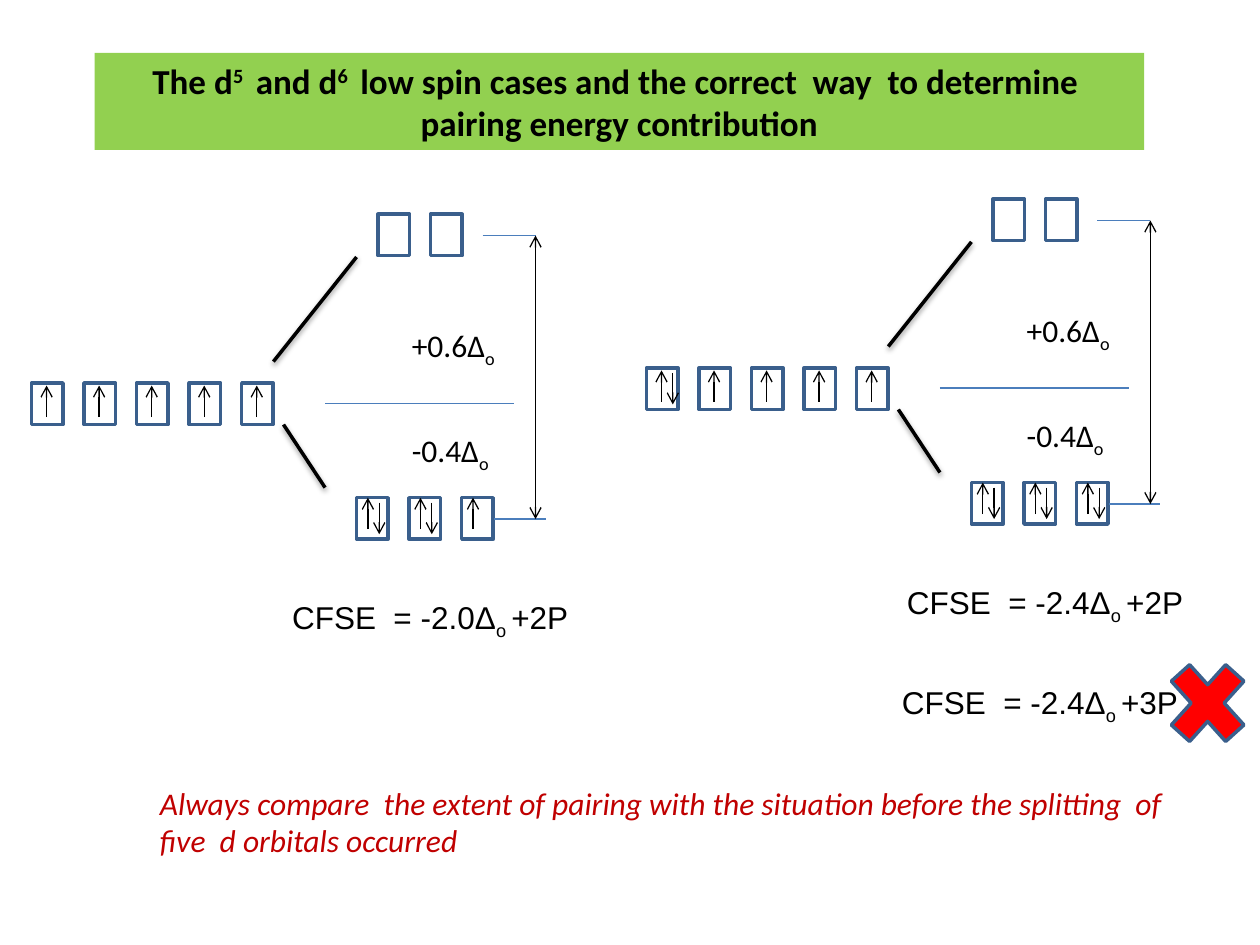
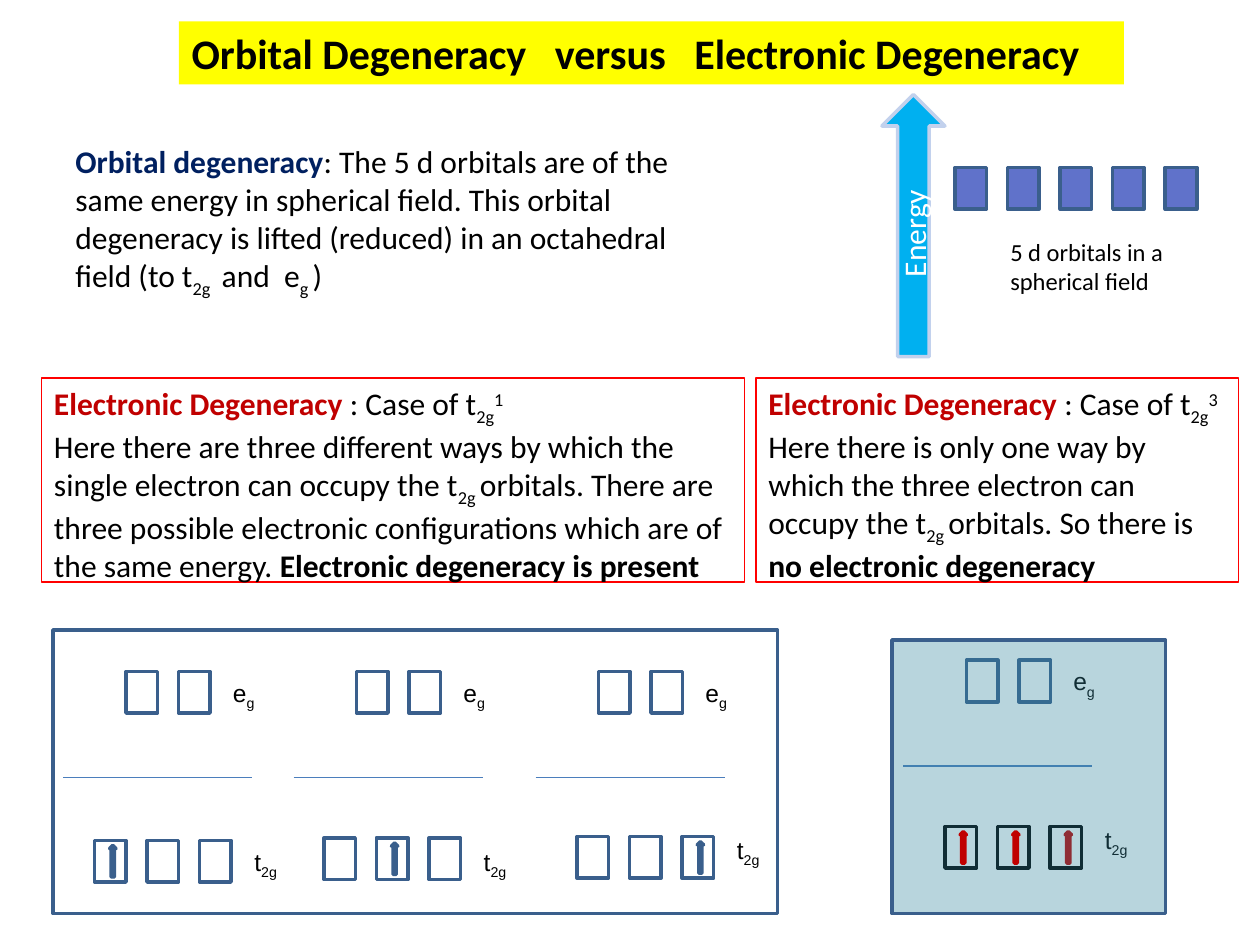
"""Build two slides on crystal field splitting and electronic degeneracy."""
import dataclasses

import lxml.etree
import pptx
import pptx.dml.color
import pptx.enum.shapes
import pptx.enum.text
import pptx.oxml.ns
import pptx.util

SHAPE = pptx.enum.shapes.MSO_SHAPE
ALIGN = pptx.enum.text.PP_ALIGN
ANCHOR = pptx.enum.text.MSO_ANCHOR
qn = pptx.oxml.ns.qn
Inches = pptx.util.Inches
Pt = pptx.util.Pt

PITCH, BOX_W, BOX_H = 0.417, 0.25, 0.33


@dataclasses.dataclass(frozen=True)
class Theme:
    ink: str = "000000"
    white: str = "FFFFFF"
    outline: str = "3A5F8C"
    level: str = "4B7EBC"
    spin: str = "4F81BD"
    orbital: str = "6072CA"
    crimson: str = "C00000"
    red: str = "FF0000"
    navy: str = "002060"
    green: str = "92D050"
    yellow: str = "FFFF00"
    sky: str = "00B0F0"
    sky_edge: str = "C2D1ED"
    teal: str = "31859C"
    body_font: str = "Calibri"
    label_font: str = "Arial"
    title: int = 24
    long_title: int = 20
    body: int = 18
    label: int = 14
    thin: float = 0.75
    thick: float = 2


T = Theme()


def rgb(color):
    return pptx.dml.color.RGBColor.from_string(color)


def inches(*lengths):
    return [Inches(length) for length in lengths]


def write(p, parts, size=T.body, font=T.body_font, color=T.ink, **marks):
    for part in parts:
        text, *tags = [part] if isinstance(part, str) else part
        p.add_run().text = text
    for f in [p.font, *(r.font for r in p.runs)]:
        f.name, f.size = font, Pt(size)
        f.color.rgb = rgb(color)
        f.bold, f.italic = marks.get("bold", False), marks.get("italic", False)
    for r, part in zip(p.runs, parts):
        for tag in [] if isinstance(part, str) else part[1:]:
            if tag == "bold":
                r.font.bold = True
            elif tag in ("sub", "sup"):
                r.font._element.set("baseline", "-25000" if tag == "sub" else "30000")
            else:
                r.font.color.rgb = rgb(tag)


def add_text(s, at, *paragraphs, border=None, space=0, **style):
    sp = s.shapes.add_textbox(*inches(*at))
    tf = sp.text_frame
    tf.word_wrap = True
    for i, parts in enumerate(paragraphs):
        p = tf.add_paragraph() if i else tf.paragraphs[0]
        p.space_before = Pt(space)
        write(p, parts, **style)
    if border:
        sp.line.color.rgb = rgb(border)
        sp.line.width = Pt(T.thin)


def add_title(s, at, fill, parts, size, align):
    sp = s.shapes.title
    sp.left, sp.top, sp.width, sp.height = inches(*at)
    sp.fill.solid()
    sp.fill.fore_color.rgb = rgb(fill)
    tf = sp.text_frame
    tf.word_wrap = True
    tf.auto_size = pptx.enum.text.MSO_AUTO_SIZE.NONE
    tf.vertical_anchor = ANCHOR.TOP
    tf.paragraphs[0].alignment = align
    write(tf.paragraphs[0], parts, size=size, bold=True)


def add_shape(s, kind, at, fill=None, line=T.outline, alpha=None):
    sp = s.shapes.add_shape(kind, *inches(*at))
    sp.shadow.inherit = False
    sp.line.color.rgb = rgb(line)
    sp.line.width = Pt(T.thick)
    if fill:
        sp.fill.solid()
        sp.fill.fore_color.rgb = rgb(fill)
    else:
        sp.fill.background()
    if alpha:
        color = sp._element.spPr.find(qn("a:solidFill"))[0]
        lxml.etree.SubElement(color, qn("a:alpha"), val=str(alpha * 1000))
    return sp


def add_line(s, start, end, color=T.ink, width=T.thin, ends=(), shadow=False):
    c = s.shapes.add_connector(
        pptx.enum.shapes.MSO_CONNECTOR.STRAIGHT, *inches(*start, *end))
    c.line.color.rgb = rgb(color)
    c.line.width = Pt(width)
    for end_name in ends:
        lxml.etree.SubElement(c.line._get_or_add_ln(), qn(f"a:{end_name}"), type="arrow")
    effects = lxml.etree.SubElement(c._element.spPr, qn("a:effectLst"))
    if shadow:
        outer = lxml.etree.SubElement(effects, qn("a:outerShdw"), blurRad=str(Pt(3.1)),
                                      dist=str(Pt(1.6)), dir="5400000", rotWithShape="0")
        black = lxml.etree.SubElement(outer, qn("a:srgbClr"), val=T.ink)
        lxml.etree.SubElement(black, qn("a:alpha"), val="38000")


def add_orbitals(s, x, y, count, **style):
    for i in range(count):
        add_shape(s, SHAPE.FLOWCHART_PROCESS, (x + i * PITCH, y, BOX_W, BOX_H), **style)


def add_electrons(s, x, y, spins, up, down, drop):
    for i, box in enumerate(spins):
        left = x + i * PITCH
        for spin in box:
            if spin == "u":
                add_line(s, (left + up, y + drop + 0.25), (left + up, y + drop),
                         ends=["tailEnd"])
            else:
                add_line(s, (left + down, y + 0.04), (left + down, y + 0.29),
                         ends=["tailEnd"])


def add_cfse(s, x, y, energy, pairing):
    add_text(s, (x, y, 2.53, 0.4),
             [f"CFSE  = {energy}Δ", ("o ", "sub"), pairing],
             font=T.label_font, space=3.6)


def add_splitting(s, x, y, before, after, energy):
    """Draw the five degenerate orbitals, their split levels and the gap."""
    add_orbitals(s, x, y, 5)
    add_orbitals(s, x + 2.75, y - 1.34, 2)
    add_orbitals(s, x + 2.58, y + 0.91, 3)
    for start, end in [((1.92, -0.17), (2.58, -1)), ((2, 0.33), (2.33, 0.83))]:
        add_line(s, (x + start[0], y + start[1]), (x + end[0], y + end[1]),
                 width=T.thick, shadow=True)
    for left, right, dy in [(3.58, 4, -1.17), (3.67, 4.08, 1.08), (2.33, 3.83, 0.16)]:
        add_line(s, (x + left, y + dy), (x + right, y + dy), color=T.level)
    add_line(s, (x + 4, y - 1.17), (x + 4, y + 1.08), ends=["headEnd", "tailEnd"])
    for dy, share in [(0.33, "-0.4Δ"), (-0.5, "+0.6Δ")]:
        add_text(s, (x + 2.92, y + dy, 1, 0.4), [share, ("o", "sub")])
    add_electrons(s, x, y, before, 0.12, 0.21, 0.02)
    add_electrons(s, x + 2.58, y + 0.91, after, 0.09, 0.18, 0)
    add_cfse(s, x + 1.97, y + 1.66, energy, "+2P")


def add_spin(s, x, y, box, line=T.outline):
    add_shape(s, SHAPE.UP_ARROW, (x + box * PITCH + 0.12, y + 0.04, 0.05, 0.25),
              fill=T.spin, line=line)


def add_levels(s, x, y, t2g_x, t2g_y, label_y, t2g_line=T.outline):
    """Draw the empty e and t levels with their labels around a mean line."""
    add_orbitals(s, x + 0.5, y - 0.84, 2)
    add_orbitals(s, t2g_x, t2g_y, 3, line=t2g_line)
    for at, name, index in [((x + 1.25, y - 0.84), "e", "g"),
                            ((t2g_x + 1.17, label_y), "t", "2g")]:
        add_text(s, (*at, 0.42, 0.34), [name, (index, "sub")],
                 size=T.label, font=T.label_font)
    add_line(s, (x, y), (x + 1.5, y), color=T.level)


def add_case(s, x, width, border, count, *statement):
    add_text(s, (x, 3, width, 1.62),
             [("Electronic Degeneracy ", "bold", T.crimson), ": Case of t",
              ("2g", "sub"), (count, "sup")],
             statement, border=border)


def add_energy_arrow(s):
    sp = add_shape(s, SHAPE.UP_ARROW, (7, 0.75, 0.5, 2.08), fill=T.sky, line=T.sky_edge)
    tf = sp.text_frame
    tf.vertical_anchor = ANCHOR.MIDDLE
    tf._txBody.bodyPr.set("vert", "vert270")
    p = tf.paragraphs[0]
    p.alignment = ALIGN.CENTER
    write(p, ["Energy"], color=T.white)


def build_pairing(s):
    add_title(s, (0.75, 0.42, 8.33, 0.77), T.green,
              ["The d", ("5 ", "sup"), " and d", ("6 ", "sup"),
               " low spin cases and the correct  way  to determine  "
               "pairing energy contribution"], T.long_title, ALIGN.CENTER)
    add_splitting(s, 0.25, 3.04, ["u"] * 5, ["ud", "ud", "u"], "-2.0")
    add_splitting(s, 5.13, 2.92, ["ud"] + ["u"] * 4, ["ud"] * 3, "-2.4")
    add_cfse(s, 7.06, 5.37, "-2.4", "+3P")
    add_shape(s, SHAPE.MATH_MULTIPLY, (9.17, 5.12, 0.83, 0.92), fill=T.red)
    add_text(s, (1.17, 6.17, 8.25, 0.71),
             ["Always compare  the extent of pairing with the situation before the "
              "splitting  of  five  d orbitals occurred"], color=T.crimson, italic=True)


def build_degeneracy(s):
    add_title(s, (1.42, 0.17, 7.5, 0.5), T.yellow,
              ["Orbital Degeneracy   versus   Electronic Degeneracy"], T.title, ALIGN.LEFT)
    add_text(s, (0.5, 1.08, 5.33, 1.31),
             [("Orbital degeneracy", "bold", T.navy),
              ": The 5 d orbitals are of the same energy in spherical field. This orbital "
              "degeneracy is lifted (reduced) in an octahedral field (to t",
              ("2g ", "sub"), " and  e", ("g ", "sub"), ")"])
    add_energy_arrow(s)
    add_orbitals(s, 7.58, 1.33, 5, fill=T.orbital)
    add_text(s, (7.92, 1.83, 1.67, 0.57), ["5 d orbitals in a spherical field"],
             size=T.label)

    add_case(s, 0.33, 5.58, T.red, "1",
             "Here there are three different ways by which the single electron can "
             "occupy the t", ("2g ", "sub"),
             "orbitals. There are three possible electronic configurations which are of "
             "the same energy. ", ("Electronic degeneracy is present", "bold"))
    add_case(s, 6, 3.83, T.red, "3",
             "Here there is only one way by which the three electron can occupy the t",
             ("2g ", "sub"), "orbitals. So there is ",
             ("no electronic degeneracy", "bold"))

    add_shape(s, SHAPE.RECTANGLE, (0.42, 5, 5.75, 2.25))
    ways = [(0.5, 0.75, 6.67, 6.67), (2.33, 2.57, 6.65, 6.67), (4.25, 4.58, 6.64, 6.58)]
    for box, (x, t2g_x, t2g_y, label_y) in enumerate(ways):
        add_levels(s, x, 6.17, t2g_x, t2g_y, label_y)
        add_spin(s, t2g_x, t2g_y, box)

    add_levels(s, 7.17, 6.08, 7.5, 6.56, 6.5, t2g_line=T.ink)
    add_spin(s, 7.5, 6.56, 2, T.crimson)
    add_shape(s, SHAPE.RECTANGLE, (7.08, 5.08, 2.17, 2.17), fill=T.teal, alpha=34)
    for box in range(2):
        add_spin(s, 7.5, 6.56, box, T.crimson)


def main():
    prs = pptx.Presentation()
    prs.slide_width, prs.slide_height = inches(10, 7.5)
    for build in (build_pairing, build_degeneracy):
        build(prs.slides.add_slide(prs.slide_layouts[5]))
    prs.save("out.pptx")


if __name__ == "__main__":
    main()
